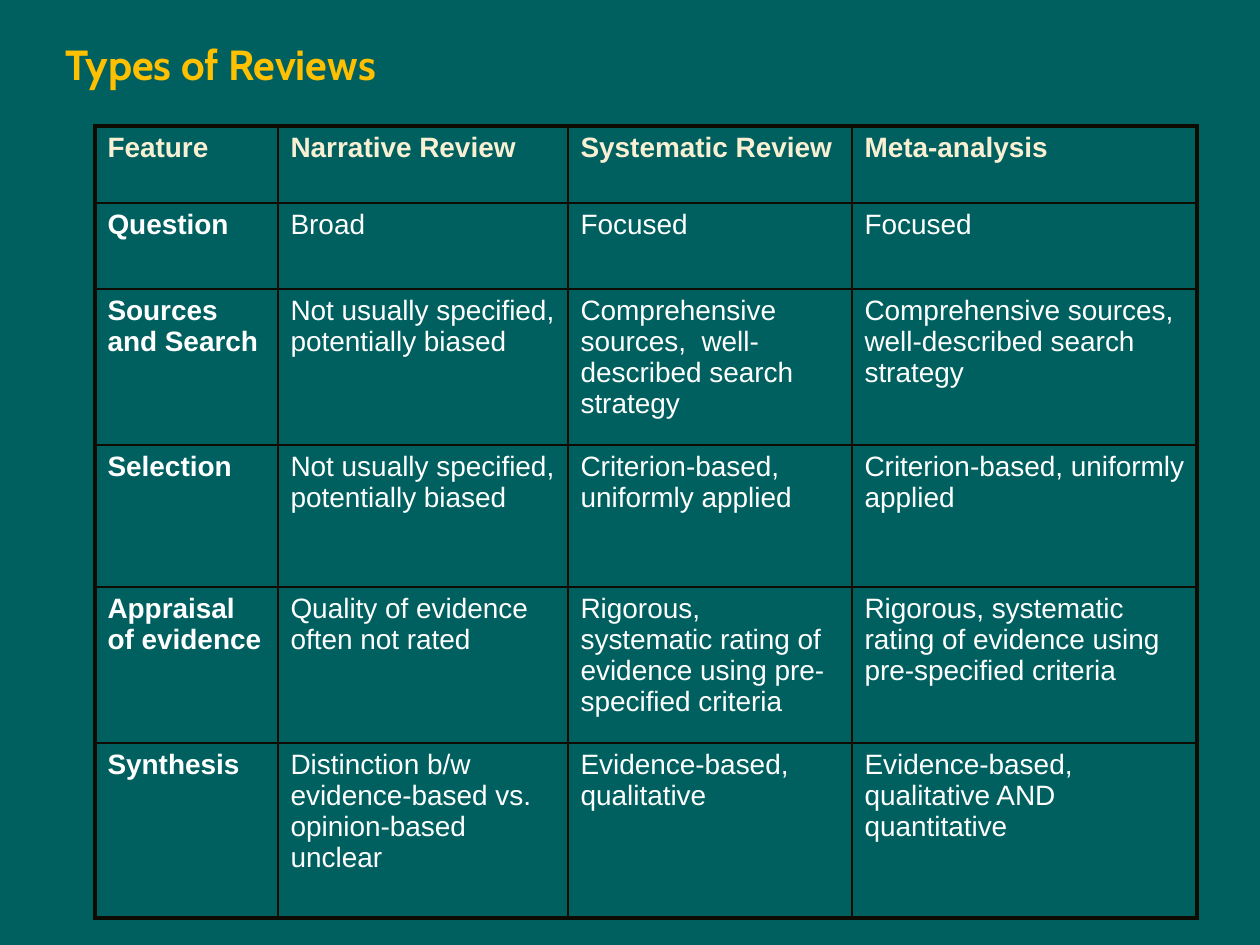
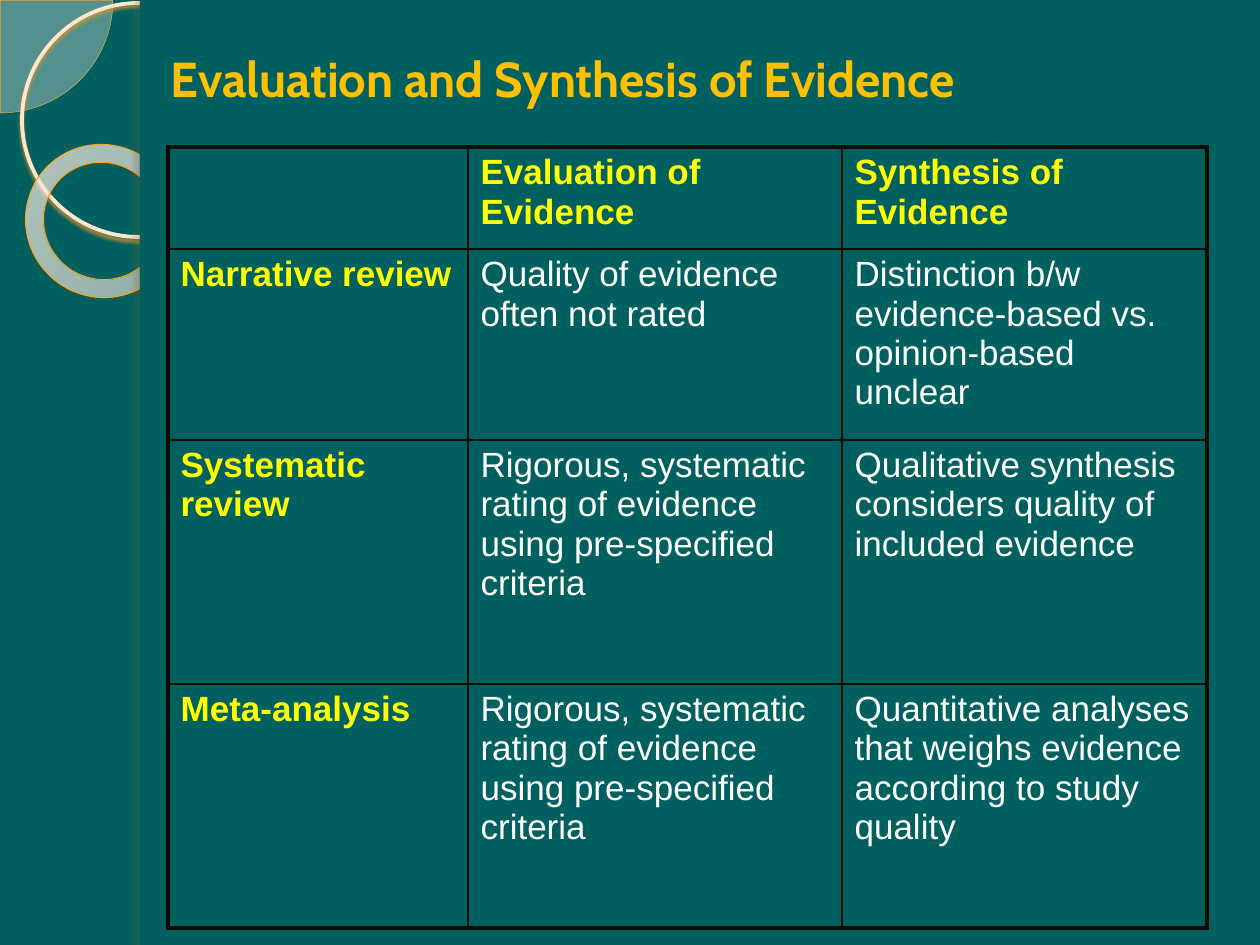
"""Builds two slides of tables that compare types of evidence reviews."""
from dataclasses import dataclass

from lxml import etree
from pptx import Presentation
from pptx.dml.color import RGBColor
from pptx.enum.shapes import MSO_SHAPE
from pptx.enum.text import MSO_ANCHOR, MSO_AUTO_SIZE, PP_ALIGN
from pptx.oxml.ns import qn
from pptx.util import Pt

PIE, ELLIPSE, DONUT, RECTANGLE = MSO_SHAPE.PIE, MSO_SHAPE.OVAL, MSO_SHAPE.DONUT, MSO_SHAPE.RECTANGLE
MIDDLE, NO_AUTOFIT, LEFT = MSO_ANCHOR.MIDDLE, MSO_AUTO_SIZE.NONE, PP_ALIGN.LEFT
PX = 914400 / 126


@dataclass(frozen=True)
class Theme:
    background: str = "006060"
    title: str = "FFC000"
    body: str = "FFFFFF"
    cream: str = "F9F0D4"
    yellow: str = "FFFF00"
    border: str = "0E0B02"
    title_font: str = "Cabin"
    body_font: str = "Arial"
    outer_border: float = 2.25
    inner_border: float = 1


THEME = Theme()


def add_color(parent, color, alpha=100):
    node = etree.SubElement(parent, qn("a:srgbClr"), val=color)
    etree.SubElement(node, qn("a:alpha"), val=str(alpha * 1000))


def add_ornament(slide, preset, box, fill=None, line=None, shadow=None):
    ornament = slide.shapes.add_shape(preset, *[round(v * PX) for v in box])
    ornament.shadow.inherit = False
    if fill:
        ornament.fill.solid()
        ornament.fill.fore_color.rgb = RGBColor.from_string(fill)
    else:
        ornament.fill.background()
    if line:
        color, width = line
        ornament.line.color.rgb = RGBColor.from_string(color)
        ornament.line.width = Pt(width)
    else:
        ornament.line.fill.background()
    if shadow:
        color, alpha, blur, distance, angle = shadow
        effects = ornament._element.spPr.find(qn("a:effectLst"))
        outer = etree.SubElement(effects, qn("a:outerShdw"), blurRad=str(Pt(blur)),
                                 dist=str(Pt(distance)), dir=str(angle * 60000),
                                 algn="ctr", rotWithShape="0")
        add_color(outer, color, alpha)
    return ornament


RIGOROUS = "Rigorous, systematic rating of evidence using pre-specified criteria"
UNCLEAR = "Distinction b/w evidence-based vs. opinion-based unclear"
NOT_RATED = "Quality of evidence often not rated"
UNSPECIFIED = "Not usually specified, potentially biased"
SEARCH = "Comprehensive sources,  well-described search strategy"
CRITERIA = "Criterion-based, uniformly applied"

PAGES = [
    dict(
        title="Types of Reviews", title_box=(53, 32, 1124, 63), title_size=24,
        ornaments=False, origin=(95, 126), size=16,
        head_color=THEME.cream, label_color=THEME.body,
        columns=[183, 290, 284, 345], heights=[77, 86, 156, 142, 156, 175],
        rows=[
            ["Feature", "Narrative Review", "Systematic Review", "Meta-analysis"],
            ["Question", "Broad", "Focused", "Focused"],
            ["Sources and Search", UNSPECIFIED, SEARCH, SEARCH],
            ["Selection", UNSPECIFIED, CRITERIA, CRITERIA],
            ["Appraisal of evidence", NOT_RATED, RIGOROUS, RIGOROUS],
            ["Synthesis", UNCLEAR, "Evidence-based, qualitative",
             "Evidence-based, qualitative AND quantitative"],
        ],
    ),
    dict(
        title="Evaluation and Synthesis of Evidence", title_box=(158, 42, 1029, 72), title_size=28,
        ornaments=True, origin=(168, 147), size=20,
        head_color=THEME.yellow, label_color=THEME.yellow,
        columns=[300, 374, 365], heights=[102, 191, 244, 244],
        rows=[
            ["", "Evaluation of Evidence", "Synthesis of Evidence"],
            ["Narrative review", NOT_RATED, UNCLEAR],
            ["Systematic review", RIGOROUS,
             "Qualitative synthesis considers quality of included evidence"],
            ["Meta-analysis", RIGOROUS,
             "Quantitative analyses that weighs evidence according to study quality"],
        ],
    ),
]

deck = Presentation()
deck.slide_width, deck.slide_height = round(1260 * PX), round(945 * PX)

for page in PAGES:
    slide = deck.slides.add_slide(deck.slide_layouts[5])
    slide.background.fill.solid()
    slide.background.fill.fore_color.rgb = RGBColor.from_string(THEME.background)

    if page["ornaments"]:
        quarter = add_ornament(slide, PIE, (-112, -112, 225, 225), "FFF5ED", ("FFAC32", 0.25))
        quarter.adjustments[0], quarter.adjustments[1] = 0, 54
        tint = quarter._element.spPr.find(qn("a:solidFill"))[0]
        etree.SubElement(tint, qn("a:alpha"), val="33000")

        add_ornament(slide, ELLIPSE, (22, 3, 234, 234), line=("FFE6CD", 2.15),
                     shadow=("D9942E", 85, 2, 2, 90))

        ring = add_ornament(slide, DONUT, (25, 145, 155, 152), line=("FFA41E", 0.58),
                            shadow=("7A4C09", 35, 1, 1.2, 75))
        ring.rotation = 38.6
        ring.adjustments[0] = 0.118
        gradient = etree.Element(qn("a:gradFill"), rotWithShape="1")
        stops = etree.SubElement(gradient, qn("a:gsLst"))
        for position, color, alpha in [(0, "FFF9F3", 70), (70, "FFFCF9", 55), (100, "FFB03B", 60)]:
            add_color(etree.SubElement(stops, qn("a:gs"), pos=str(position * 1000)), color, alpha)
        focus = etree.SubElement(gradient, qn("a:path"), attrib={"path": "circle"})
        etree.SubElement(focus, qn("a:fillToRect"), l="-408000", t="-50000", r="508000", b="150000")
        ring_properties = ring._element.spPr
        ring_properties.replace(ring_properties.find(qn("a:noFill")), gradient)

        add_ornament(slide, RECTANGLE, (140, 0, 1120, 945), THEME.background)
        add_ornament(slide, RECTANGLE, (140, 0, 10, 945), THEME.background,
                     shadow=("82612E", 25, 3, 3, 180))

    columns, heights, rows = page["columns"], page["heights"], page["rows"]
    bounds = (*page["origin"], sum(columns), sum(heights))
    comparison = slide.shapes.add_table(len(rows), len(columns), *[round(v * PX) for v in bounds]).table
    comparison.first_row = comparison.horz_banding = False
    for column, width in zip(comparison.columns, columns):
        column.width = round(width * PX)
    for row, height in zip(comparison.rows, heights):
        row.height = round(height * PX)

    for r, entries in enumerate(rows):
        for c, entry in enumerate(entries):
            cell = comparison.cell(r, c)
            properties = cell._tc.get_or_add_tcPr()
            edges = {"L": c == 0, "R": c == len(columns) - 1, "T": r == 0, "B": r == len(rows) - 1}
            for side, is_outer in edges.items():
                width = THEME.outer_border if is_outer else THEME.inner_border
                border = etree.SubElement(properties, qn(f"a:ln{side}"), w=str(Pt(width)))
                add_color(etree.SubElement(border, qn("a:solidFill")), THEME.border)
            cell.fill.background()
            if entry:
                run = cell.text_frame.paragraphs[0].add_run()
                run.text = entry
                run.font.name, run.font.size = THEME.body_font, Pt(page["size"])
                run.font.bold = r == 0 or c == 0
                color = page["head_color"] if r == 0 else page["label_color"] if c == 0 else THEME.body
                run.font.color.rgb = RGBColor.from_string(color)

    title = slide.shapes.title
    title.left, title.top, title.width, title.height = [round(v * PX) for v in page["title_box"]]
    title.text_frame.vertical_anchor = MIDDLE
    title.text_frame.auto_size = NO_AUTOFIT
    heading = title.text_frame.paragraphs[0]
    heading.alignment = LEFT
    run = heading.add_run()
    run.text = page["title"]
    run.font.name, run.font.size, run.font.bold = THEME.title_font, Pt(page["title_size"]), True
    run.font.color.rgb = RGBColor.from_string(THEME.title)
    slide.shapes._spTree.append(title._element)

deck.save("out.pptx")
